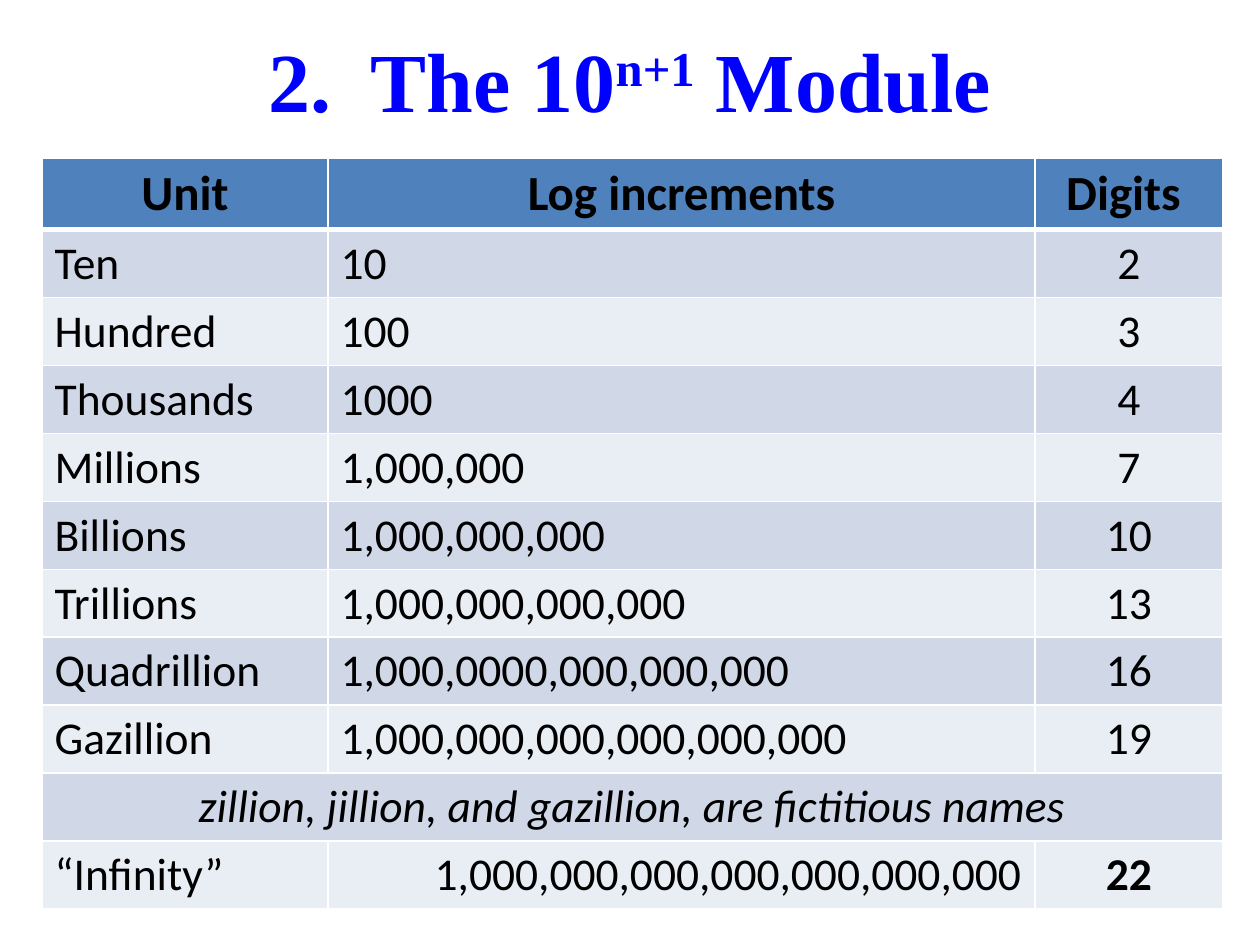
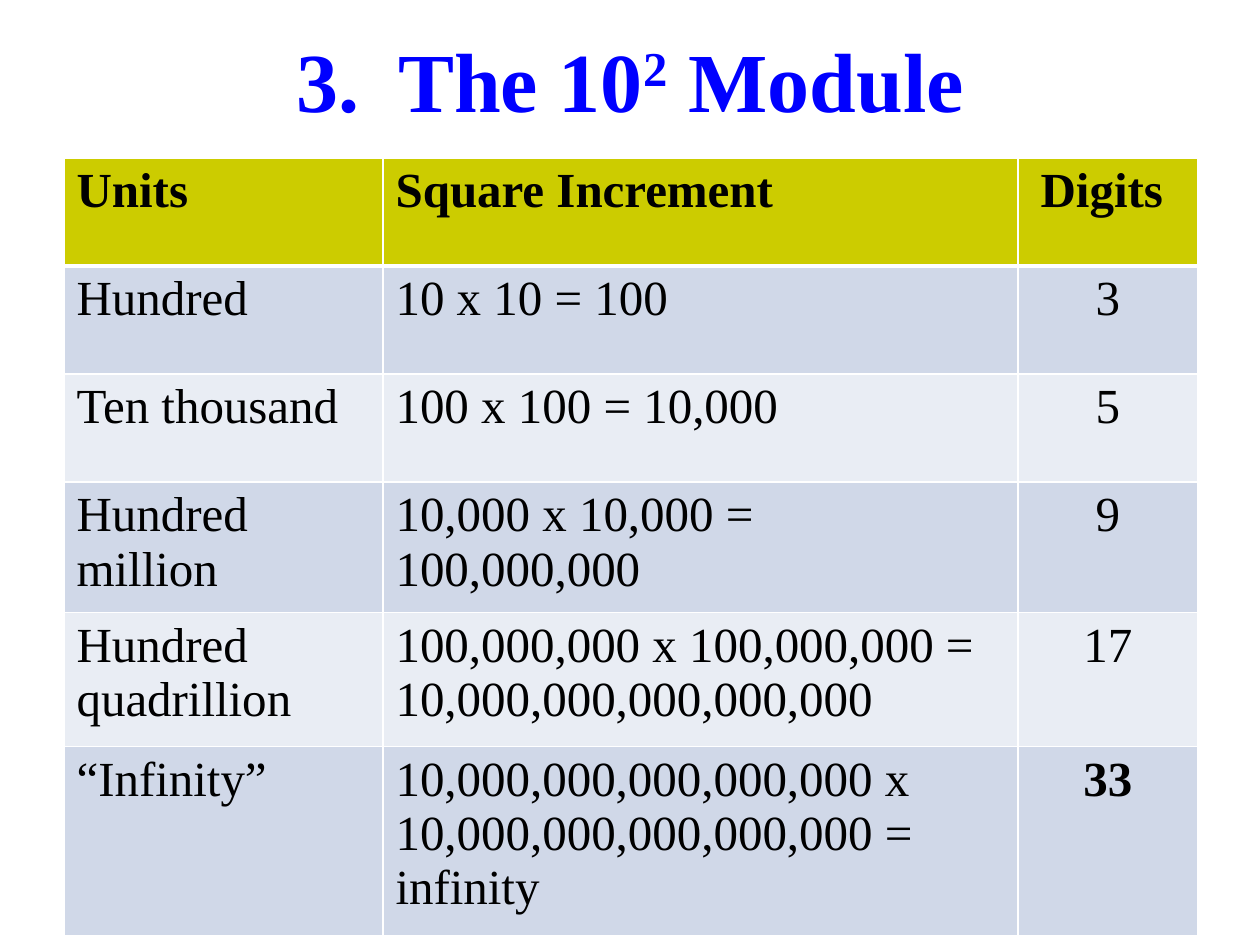
"""Build two slides that tabulate the number modules."""
from lxml import etree
from pptx import Presentation
from pptx import util as u
from pptx.dml.color import RGBColor
from pptx.enum import text
from pptx.oxml.ns import qn

PX = 914400 / 126
BLUE, BLACK, WHITE = "0000FF", "000000", "FFFFFF"
BANDS = ["D0D8E8", "E9EDF4"]
SERIF, SANS = "Times New Roman", "Calibri"
LEFT, MID, RIGHT = text.PP_ALIGN.LEFT, text.PP_ALIGN.CENTER, text.PP_ALIGN.RIGHT
TOP = 158

SLIDES = [
    dict(
        num=2, power="n+1", left=42, font=SANS, size=26, head="4F81BD",
        cols=[286, 707, 188], tall=[70] + [68] * 10,
        heads=[MID, MID, MID], span=9, ends={(10, 1): RIGHT},
        rows=[
            ["Unit", "Log increments", "Digits "],
            ["Ten", "10", "2"],
            ["Hundred", "100", "3"],
            ["Thousands", "1000", "4"],
            ["Millions", "1,000,000", "7"],
            ["Billions", "1,000,000,000", "10"],
            ["Trillions", "1,000,000,000,000", "13"],
            ["Quadrillion", "1,000,0000,000,000,000", "16"],
            ["Gazillion", "1,000,000,000,000,000,000", "19"],
            ["zillion, jillion, and gazillion, are fictitious names"],
            ["“Infinity”", "1,000,000,000,000,000,000,000", "22"],
        ]),
    dict(
        num=3, power="2", left=64, font=SERIF, size=28, head="CCCC00",
        cols=[319, 635, 180], tall=[108, 108, 108, 130, 134, 189],
        heads=[LEFT, LEFT, MID], span=None, ends={},
        rows=[
            ["Units", "Square Increment", "Digits "],
            ["Hundred", "10 x 10 = 100", "3"],
            ["Ten thousand", "100 x 100 = 10,000", "5"],
            ["Hundred million", "10,000 x 10,000 = 100,000,000", "9"],
            ["Hundred quadrillion",
             "100,000,000 x 100,000,000 = 10,000,000,000,000,000", "17"],
            ["“Infinity”",
             "10,000,000,000,000,000 x 10,000,000,000,000,000 = infinity", "33"],
        ]),
]


def px(n):
    return u.Emu(round(n * PX))


def rgb(code):
    return RGBColor.from_string(code)


def add_run(para, words, face, size, color, bold=False, slant=False):
    run = para.add_run()
    run.text = words
    font = run.font
    font.name, font.size = face, u.Pt(size)
    font.bold, font.italic = bold, slant
    font.color.rgb = rgb(color)
    return run


def add_title(slide, num, power):
    box = slide.shapes.title
    box.left, box.top, box.width, box.height = px(0), px(21), px(1260), px(115)
    frame = box.text_frame
    frame.auto_size = text.MSO_AUTO_SIZE.SHAPE_TO_FIT_TEXT
    frame.vertical_anchor = text.MSO_ANCHOR.MIDDLE
    para = frame.paragraphs[0]
    props = para._p.get_or_add_pPr()
    props.set("marL", str(px(102)))
    props.set("indent", str(-px(102)))
    etree.SubElement(props, qn("a:buFont"), typeface="+mj-lt")
    etree.SubElement(props, qn("a:buAutoNum"), type="arabicPeriod", startAt=str(num))
    para.alignment = MID
    for words, base in [("The 10", 0), (power, 30), (" Module", 0)]:
        run = add_run(para, words, SERIF, 48, BLUE, True)
        if base:
            run.font._element.set("baseline", str(base * 1000))


def add_edges(cell, row):
    props = cell._tc.get_or_add_tcPr()
    wide = {"T": 3 if row == 1 else 1, "B": 3 if row == 0 else 1}
    for side in "LRTB":
        line = etree.SubElement(props, qn("a:ln" + side), w=str(u.Pt(wide.get(side, 1))))
        fill = etree.SubElement(line, qn("a:solidFill"))
        etree.SubElement(fill, qn("a:srgbClr"), val=WHITE)


def add_grid(slide, part):
    rows, cols, tall = part["rows"], part["cols"], part["tall"]
    grid = slide.shapes.add_table(len(rows), len(cols), px(part["left"]), px(TOP),
                                  px(sum(cols)), px(sum(tall))).table
    for col, wide in zip(grid.columns, cols):
        col.width = px(wide)
    for row, high in zip(grid.rows, tall):
        row.height = px(high)
    for r, row in enumerate(rows):
        is_span = r == part["span"]
        for c in range(len(cols)):
            cell = grid.cell(r, c)
            add_edges(cell, r)
            cell.fill.solid()
            cell.fill.fore_color.rgb = rgb(BANDS[(r - 1) % 2] if r else part["head"])
        if is_span:
            grid.cell(r, 0).merge(grid.cell(r, len(cols) - 1))
        for c, words in enumerate(row):
            para = grid.cell(r, c).text_frame.paragraphs[0]
            base = MID if is_span or c == 2 else LEFT
            para.alignment = part["ends"].get((r, c), base) if r else part["heads"][c]
            bold = r == 0 or (r == len(rows) - 1 and c == 2)
            add_run(para, words, part["font"], part["size"] if r else 28, BLACK,
                    bold, is_span)


def main():
    deck = Presentation()
    deck.slide_width, deck.slide_height = px(1260), px(945)
    for part in SLIDES:
        slide = deck.slides.add_slide(deck.slide_layouts[5])
        add_grid(slide, part)
        add_title(slide, part["num"], part["power"])
    deck.save("out.pptx")


if __name__ == "__main__":
    main()
